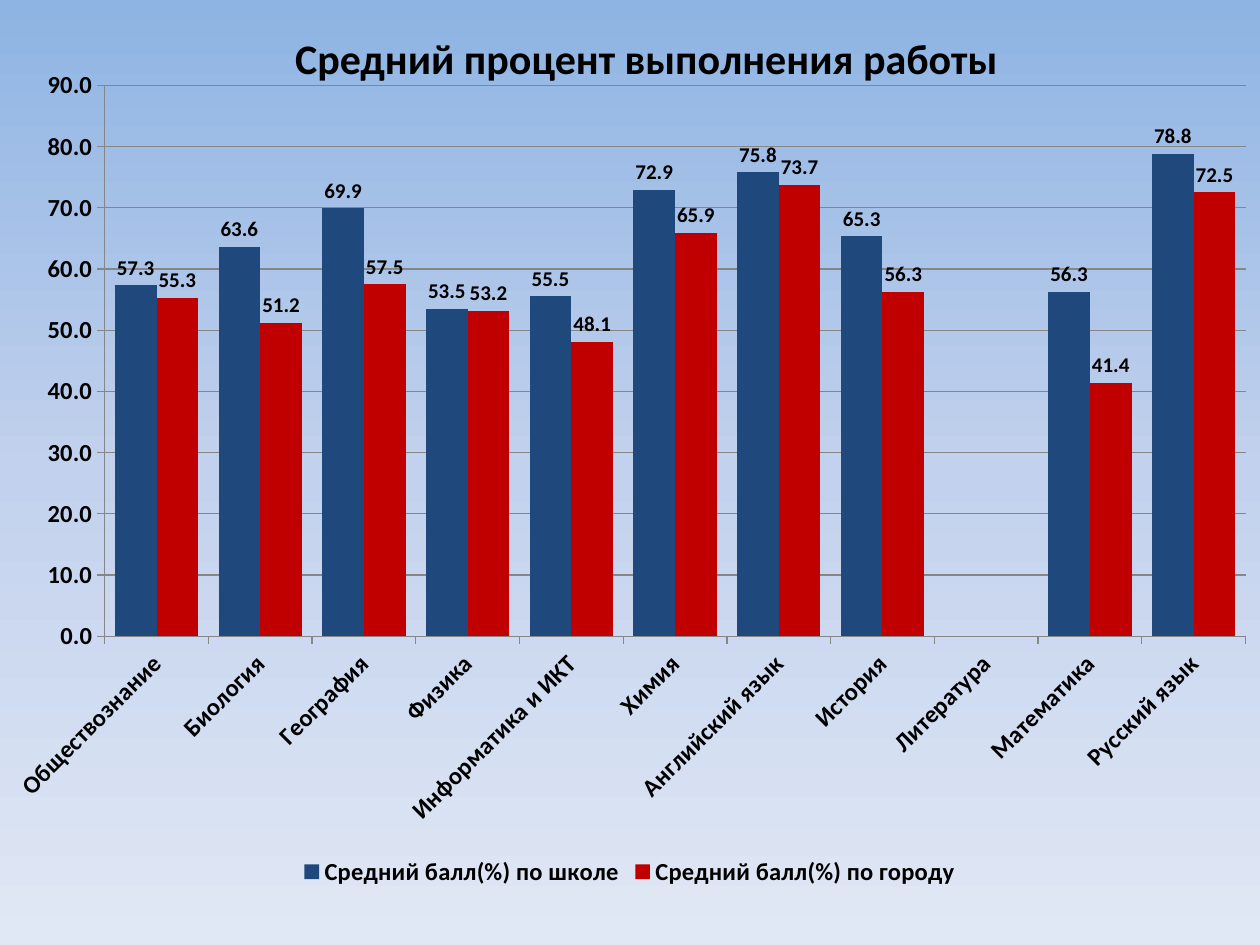
from copy import deepcopy

from pptx import Presentation
from pptx.chart.data import CategoryChartData
from pptx.dml.color import RGBColor
from pptx.enum.chart import XL_CHART_TYPE as ChartType
from pptx.enum.chart import XL_LABEL_POSITION as LabelPosition
from pptx.enum.chart import XL_LEGEND_POSITION as LegendPosition
from pptx.enum.chart import XL_TICK_MARK as TickMark
from pptx.enum.text import MSO_AUTO_SIZE as AutoSize
from pptx.oxml import parse_xml
from pptx.oxml.ns import nsdecls, qn
from pptx.util import Cm, Pt

BLACK = RGBColor(0x00, 0x00, 0x00)
GREY = RGBColor(0x86, 0x86, 0x86)
NAVY = RGBColor(0x1F, 0x49, 0x7D)
RED = RGBColor(0xC0, 0x00, 0x00)
SKY = [
    (0, RGBColor(0x8E, 0xB4, 0xE3)),
    (0.5, RGBColor(0xC2, 0xD1, 0xED)),
    (1, RGBColor(0xE1, 0xE8, 0xF5)),
]

SUBJECTS = [
    "Обществознание", "Биология", "География", "Физика", "Информатика и ИКТ",
    "Химия", "Английский язык", "История", "Литература", "Математика", "Русский язык",
]
SCORES = [
    ("Средний балл(%) по школе", NAVY,
     [57.3, 63.6, 69.9, 53.5, 55.5, 72.9, 75.8, 65.3, None, 56.3, 78.8]),
    ("Средний балл(%) по городу", RED,
     [55.3, 51.2, 57.5, 53.2, 48.1, 65.9, 73.7, 56.3, None, 41.4, 72.5]),
]
NUMBER_FORMAT = "0.0"


class SlideBuilder:
    def __init__(self, slide, font_name="Calibri"):
        self.slide = slide
        self.font_name = font_name

    def style(self, font, size, bold=True):
        font.name = self.font_name
        font.size = Pt(size)
        font.bold = bold
        font.color.rgb = BLACK

    def background(self, stops):
        """Fill the slide with a gradient running from top to bottom."""
        fill = self.slide.background.fill
        fill.gradient()
        fill.gradient_angle = 270
        stop_list = next(self.slide.element.iter(qn("a:gsLst")))
        stop_list.append(deepcopy(stop_list[-1]))
        for stop, (position, color) in zip(fill.gradient_stops, stops):
            stop.position = position
            stop.color.rgb = color

    def heading(self, text, left, top, width, height):
        box = self.slide.shapes.add_textbox(left, top, width, height)
        frame = box.text_frame
        frame.text = text
        frame.word_wrap = False
        frame.auto_size = AutoSize.SHAPE_TO_FIT_TEXT
        self.style(frame.paragraphs[0].runs[0].font, 24)

    def column_chart(self, categories, scores, left, top, width, height):
        data = CategoryChartData(number_format=NUMBER_FORMAT)
        data.categories = categories
        for name, _, values in scores:
            data.add_series(name, values)
        frame = self.slide.shapes.add_chart(
            ChartType.COLUMN_CLUSTERED, left, top, width, height, data)
        chart = frame.chart
        self.style(chart.font, 10, bold=False)
        chart.has_title = False
        chart.has_legend = True
        chart.legend.position = LegendPosition.BOTTOM
        chart.legend.include_in_layout = False
        self.style(chart.legend.font, 14)

        plot = chart.plots[0]
        plot.gap_width = 49
        plot.overlap = 0
        plot.vary_by_categories = False
        for series, (_, color, _) in zip(plot.series, scores):
            self.series(series, color)
        for axis in (chart.category_axis, chart.value_axis):
            self.axis(axis)
        self.value_scale(chart.value_axis)
        self.tilt_categories(chart, -45)
        return frame

    def series(self, series, color):
        series.format.fill.solid()
        series.format.fill.fore_color.rgb = color
        series.invert_if_negative = False
        labels = series.data_labels
        labels.show_value = True
        labels.number_format = NUMBER_FORMAT
        labels.number_format_is_linked = False
        labels.position = LabelPosition.OUTSIDE_END
        self.style(labels.font, 12)

    def axis(self, axis):
        axis.major_tick_mark = TickMark.OUTSIDE
        axis.minor_tick_mark = TickMark.NONE
        axis.format.line.color.rgb = GREY
        axis.format.line.width = Pt(0.75)
        self.style(axis.tick_labels.font, 14)

    def value_scale(self, axis):
        axis.minimum_scale = 0
        axis.maximum_scale = 90
        axis.major_unit = 10
        axis.has_major_gridlines = True
        axis.major_gridlines.format.line.color.rgb = GREY
        axis.major_gridlines.format.line.width = Pt(0.75)
        axis.tick_labels.number_format = NUMBER_FORMAT
        axis.tick_labels.number_format_is_linked = False

    def tilt_categories(self, chart, degrees):
        category_axis = next(chart.element.iter(qn("c:catAx")))
        body = next(category_axis.iter(qn("a:bodyPr")))
        body.set("rot", str(degrees * 60000))
        body.set("vert", "horz")

    def plot_area(self, frame, left, top, width, height):
        """Place the inner plot area, given in slide lengths."""
        fractions = {
            "x": (left - frame.left) / frame.width,
            "y": (top - frame.top) / frame.height,
            "w": width / frame.width,
            "h": height / frame.height,
        }
        places = "".join(
            f'<c:{name} val="{value}"/>' for name, value in fractions.items())
        layout = parse_xml(
            f'<c:layout {nsdecls("c")}><c:manualLayout><c:layoutTarget val="inner"/>'
            f'<c:xMode val="edge"/><c:yMode val="edge"/>{places}'
            "</c:manualLayout></c:layout>")
        area = next(frame.chart.element.iter(qn("c:plotArea")))
        for old in area.findall(qn("c:layout")):
            area.remove(old)
        area.insert(0, layout)


def main():
    deck = Presentation()
    deck.slide_width, deck.slide_height = Cm(25.4), Cm(19.05)
    builder = SlideBuilder(deck.slides.add_slide(deck.slide_layouts[6]))
    builder.background(SKY)
    builder.heading("Средний процент выполнения работы",
                    Cm(5.7), Cm(0.53), Cm(14.81), Cm(1.27))
    scores_frame = builder.column_chart(
        SUBJECTS, SCORES, Cm(-0.22), Cm(1.09), Cm(25.83), Cm(16.89))
    builder.plot_area(scores_frame, Cm(2.11), Cm(1.72), Cm(23), Cm(11.11))
    deck.save("out.pptx")


if __name__ == "__main__":
    main()
